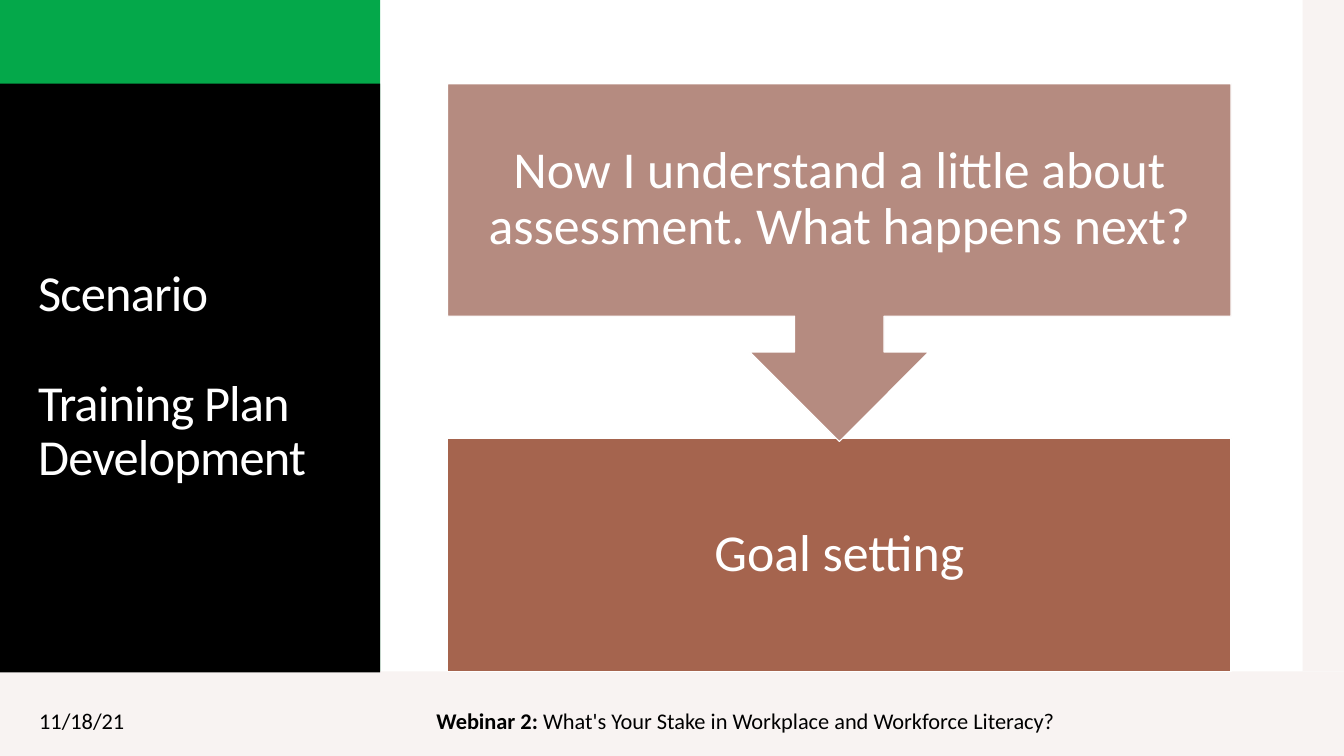
from pptx import Presentation
from pptx.dml.color import RGBColor
from pptx.enum.shapes import MSO_SHAPE as SHAPE
from pptx.enum.text import MSO_ANCHOR as ANCHOR, PP_ALIGN as ALIGN
from pptx.util import Inches, Pt

WIDTH, HEIGHT = 13.33, 7.5
SIDE_W, FOOTER_Y, TOP = 3.77, 6.66, 0.83
GREEN, BLACK, WHITE, TINT = "04A84A", "000000", "FFFFFF", "F8F3F2"
ROSE, RUST = "B58B80", "A5644E"


def rgb(value):
    return RGBColor.from_string(value)


def add_block(slide, box, fill, kind=SHAPE.RECTANGLE, line=None):
    sp = slide.shapes.add_shape(kind, *map(Inches, box))
    sp.shadow.inherit = False
    sp.fill.solid()
    sp.fill.fore_color.rgb = rgb(fill)
    if line:
        sp.line.color.rgb = rgb(line)
        sp.line.width = Pt(0.85)
    else:
        sp.line.fill.background()
    return sp


def add_text(slide, box):
    """Add a wrapping, vertically centred text box and return its frame."""
    tf = slide.shapes.add_textbox(*map(Inches, box)).text_frame
    tf.word_wrap = True
    tf.vertical_anchor = ANCHOR.MIDDLE
    return tf


def add_run(p, text, size, color, bold=False):
    r = p.add_run()
    r.text = text
    style = {"name": "Calibri", "size": Pt(size), "bold": bold}
    for key, value in style.items():
        setattr(r.font, key, value)
    r.font.color.rgb = rgb(color)
    return r


def add_footer(slide, x, y, w, h):
    add_block(slide, (x, y, w, h), TINT)
    text_y, text_h = y + 0.29, 0.4
    date = add_text(slide, (x + 0.29, text_y, 3, text_h))
    add_run(date.paragraphs[0], "11/18/21", 16, BLACK)
    p = add_text(slide, (x + 4.23, text_y, 6.46, text_h)).paragraphs[0]
    add_run(p, "Webinar 2: ", 16, BLACK, bold=True)
    add_run(p, "What's Your Stake in Workplace and Workforce Literacy?", 16, BLACK)


def add_title_panel(slide, x, y, w, h):
    add_block(slide, (x, y, w, h), GREEN)
    add_block(slide, (x, y + TOP, w, h - TOP + 0.01), BLACK)
    tf = add_text(slide, (x + 0.28, y + 1.23, 3.22, 5.03))
    for i, text in enumerate(("Scenario", "Training Plan Development")):
        p = tf.add_paragraph() if i else tf.paragraphs[0]
        p.line_spacing = 0.9
        p.space_before = Pt(39.5 * i)
        r = add_run(p, text, 36, WHITE)
        r._r.get_or_add_rPr().set("spc", "-60")


def add_step(slide, box, text, fill, kind):
    sp = add_block(slide, box, fill, kind, WHITE)
    tf = sp.text_frame
    tf.word_wrap = True
    tf.vertical_anchor = ANCHOR.MIDDLE
    for side in ("left", "top", "right", "bottom"):
        setattr(tf, f"margin_{side}", Inches(0.29))
    p = tf.paragraphs[0]
    p.alignment = ALIGN.CENTER
    p.line_spacing = 0.9
    add_run(p, text, 37, WHITE)


def add_process(slide, x, y, w, h):
    """Stack the callout, whose arrow points down, above the next step."""
    step_h, callout_h = 2.31, 3.55
    add_step(slide, (x, y + h - step_h, w, step_h), "Goal setting",
             RUST, SHAPE.RECTANGLE)
    add_step(slide, (x, y, w, callout_h),
             "Now I understand a little about assessment. What happens next?",
             ROSE, SHAPE.DOWN_ARROW_CALLOUT)


def main():
    prs = Presentation()
    prs.slide_width, prs.slide_height = Inches(WIDTH), Inches(HEIGHT)
    slide = prs.slides.add_slide(prs.slide_layouts[6])
    add_footer(slide, 0, FOOTER_Y, WIDTH, HEIGHT - FOOTER_Y)
    add_block(slide, (12.92, 0, WIDTH - 12.92, FOOTER_Y), TINT)
    add_title_panel(slide, 0, 0, SIDE_W, FOOTER_Y)
    add_process(slide, 4.44, TOP, 7.77, FOOTER_Y - TOP)
    prs.save("out.pptx")


if __name__ == "__main__":
    main()
